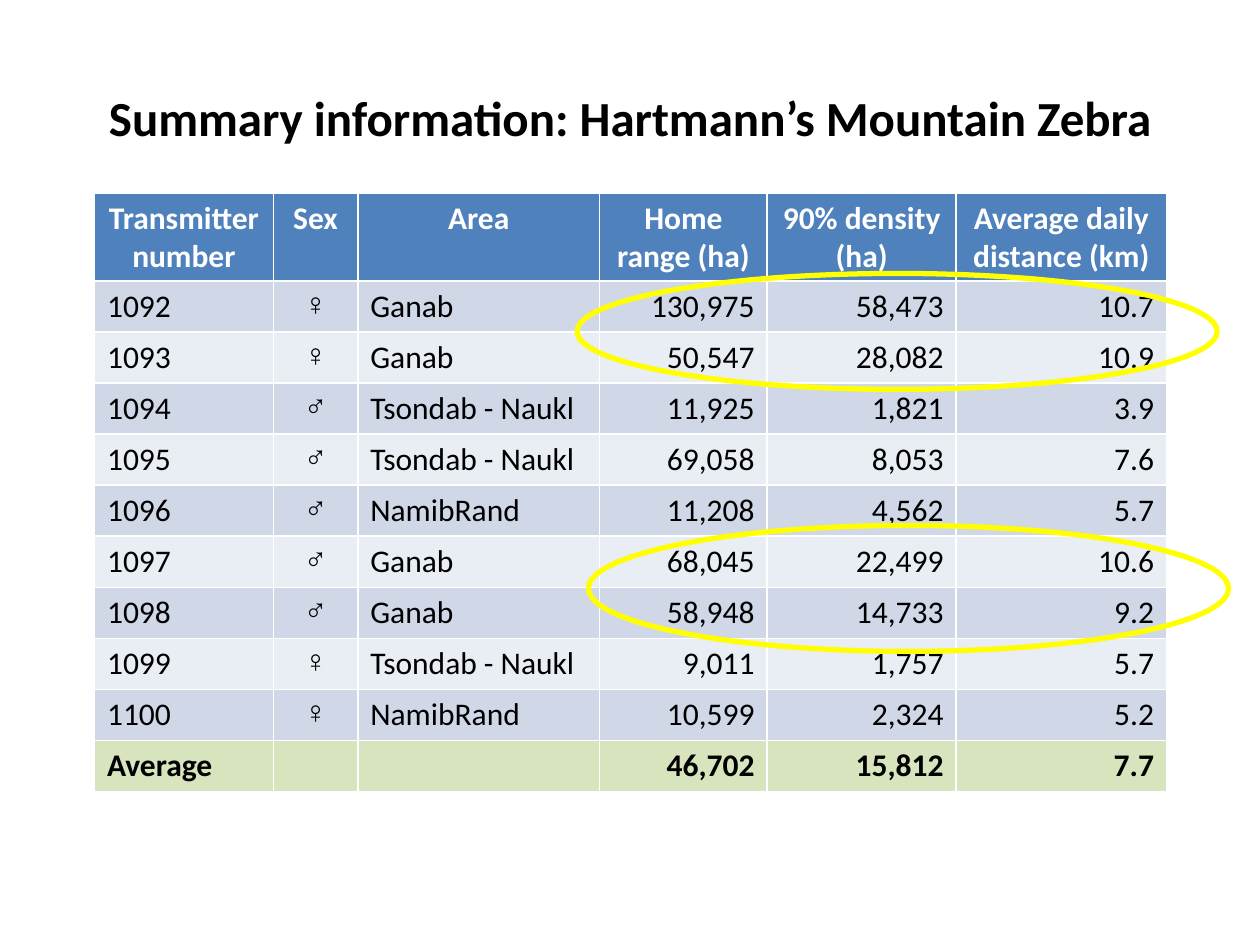
import pptx
import pptx.util
import pptx.dml.color
import pptx.enum.shapes
import pptx.enum.text

Inches = pptx.util.Inches
Align = pptx.enum.text.PP_ALIGN


def color(value):
    return pptx.dml.color.RGBColor.from_string(value)


def style(para, size, ink, bold, align, face="Calibri"):
    para.alignment = align
    para.font.name = face
    para.font.size = pptx.util.Pt(size)
    para.font.bold = bold
    para.font.color.rgb = color(ink)


deck = pptx.Presentation()
deck.slide_width = Inches(10)
deck.slide_height = Inches(7.5)
page = deck.slides.add_slide(deck.slide_layouts[6])

title = page.shapes.add_textbox(Inches(0.5), Inches(0.3), Inches(9), Inches(1.25)).text_frame
title.word_wrap = True
title.vertical_anchor = pptx.enum.text.MSO_ANCHOR.MIDDLE
title.text = "Summary information: Hartmann’s Mountain Zebra"
style(title.paragraphs[0], 28, "000000", True, Align.CENTER)

rows = [
    ("Transmitter number", "Sex", "Area", "Home range (ha)", "90% density (ha)", "Average daily distance (km)"),
    ("1092", "♀", "Ganab", "130,975", "58,473", "10.7"),
    ("1093", "♀", "Ganab", "50,547", "28,082", "10.9"),
    ("1094", "♂", "Tsondab - Naukl", "11,925", "1,821", "3.9"),
    ("1095", "♂", "Tsondab - Naukl", "69,058", "8,053", "7.6"),
    ("1096", "♂", "NamibRand", "11,208", "4,562", "5.7"),
    ("1097", "♂", "Ganab", "68,045", "22,499", "10.6"),
    ("1098", "♂", "Ganab", "58,948", "14,733", "9.2"),
    ("1099", "♀", "Tsondab - Naukl", "9,011", "1,757", "5.7"),
    ("1100", "♀", "NamibRand", "10,599", "2,324", "5.2"),
    ("Average", "", "", "46,702", "15,812", "7.7"),
]
widths = [1.42, 0.67, 1.92, 1.33, 1.5, 1.67]
aligns = [Align.LEFT, Align.CENTER, Align.LEFT, Align.RIGHT, Align.RIGHT, Align.RIGHT]
last = len(rows) - 1

table = page.shapes.add_table(
    len(rows), len(widths), Inches(0.75), Inches(1.53), Inches(8.5), Inches(4.46)
).table
table.horz_banding = False
for column, width in zip(table.columns, widths):
    column.width = Inches(width)

for row, values in enumerate(rows):
    header = row == 0
    if header:
        fill = "4F81BD"
    elif row == last:
        fill = "D7E4BD"
    else:
        fill = "D0D8E8" if row % 2 else "E9EDF4"
    for col, value in enumerate(values):
        cell = table.cell(row, col)
        cell.fill.solid()
        cell.fill.fore_color.rgb = color(fill)
        cell.text = value
        symbol = value in ("♀", "♂")
        style(
            cell.text_frame.paragraphs[0],
            18,
            "FFFFFF" if header else "000000",
            header or symbol or row == last,
            Align.CENTER if header else aligns[col],
            "Times New Roman" if symbol else "Calibri",
        )

for left, top, height in [(4.58, 2.17, 0.92), (4.67, 4.17, 1)]:
    ring = page.shapes.add_shape(
        pptx.enum.shapes.MSO_SHAPE.OVAL, Inches(left), Inches(top), Inches(5.08), Inches(height)
    )
    ring.shadow.inherit = False
    ring.fill.background()
    ring.line.color.rgb = color("FFFF00")
    ring.line.width = pptx.util.Pt(3)

deck.save("out.pptx")
